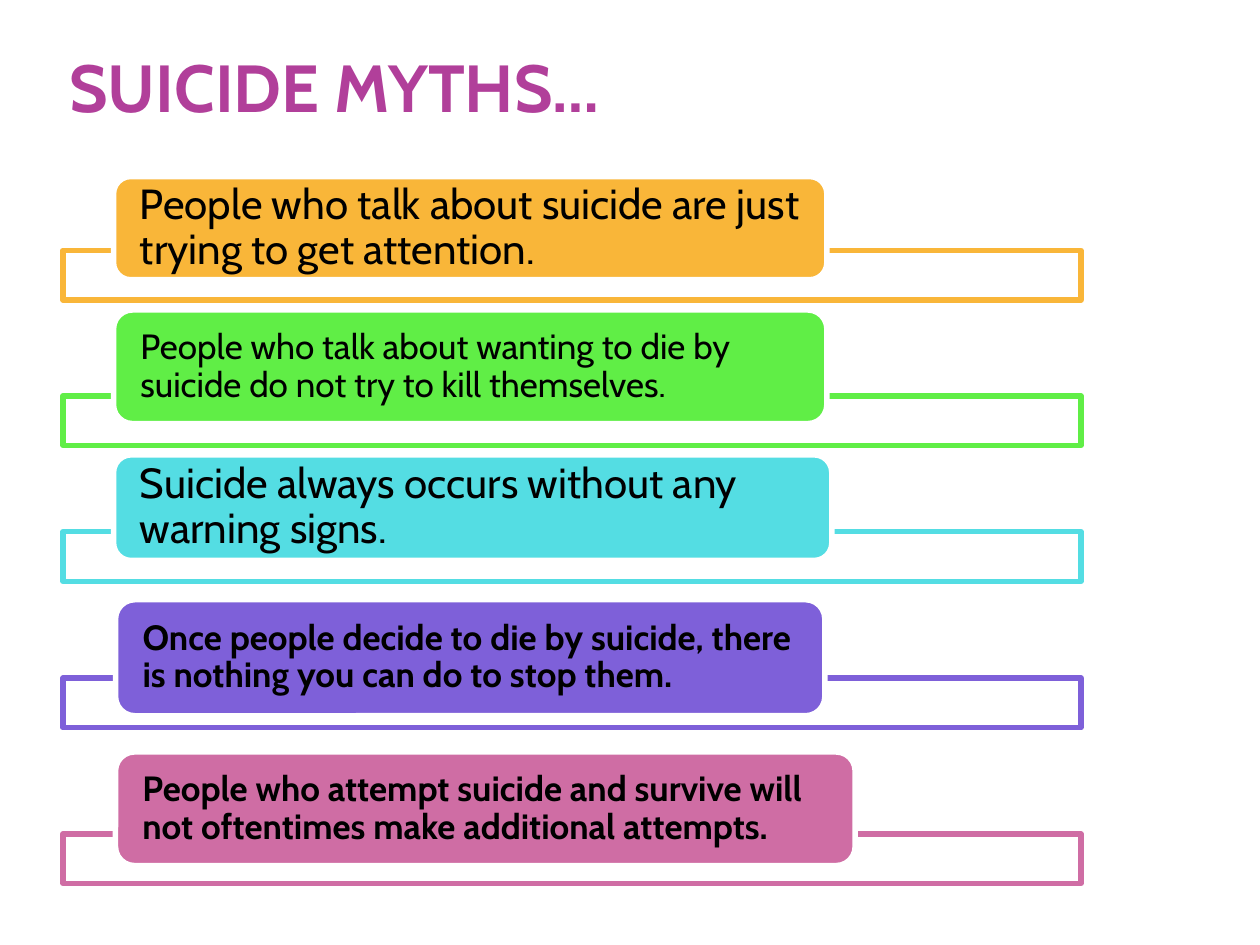
from dataclasses import dataclass

from pptx import Presentation
from pptx.dml.color import RGBColor
from pptx.enum import shapes, text
from pptx.util import Cm, Pt


@dataclass(frozen=True)
class Theme:
    font: str = "Cabin"
    title: str = "B13F9A"
    ink: str = "000000"
    paper: str = "FFFFFF"
    orange: str = "F9B639"
    green: str = "60EE46"
    cyan: str = "54DDE3"
    violet: str = "7E60D9"
    pink: str = "CF6DA4"
    title_size: float = 38
    large: float = 24
    small: float = 20
    line: float = 3.15


@dataclass(frozen=True)
class Myth:
    words: str
    color: str
    size: float
    bold: bool
    top: float
    indent: float
    width: float
    height: float
    bar_drop: float


THEME = Theme()
BAR_HEIGHT = 1.0
MYTHS = [
    Myth("People who talk about suicide are just trying to get attention.",
         THEME.orange, THEME.large, False, 3.56, 1.02, 14.38, 2.08, 1.49),
    Myth("People who talk about wanting to die by suicide do not try to kill themselves.",
         THEME.green, THEME.small, False, 6.25, 1.02, 14.38, 2.29, 1.73),
    Myth("Suicide always occurs without any warning signs.",
         THEME.cyan, THEME.large, False, 9.17, 1.02, 14.48, 2.13, 1.55),
    Myth("Once people decide to die by suicide, there is nothing you can do to stop them.",
         THEME.violet, THEME.small, True, 12.09, 1.06, 14.3, 2.34, 1.58),
    Myth("People who attempt suicide and survive will not oftentimes make additional attempts.",
         THEME.pink, THEME.small, True, 15.16, 1.06, 14.91, 2.29, 1.65),
]


def write(sp, words, size, color, bold, anchor, inset):
    tf = sp.text_frame
    tf.word_wrap = True
    tf.vertical_anchor = anchor
    tf.margin_left = tf.margin_right = Cm(inset)
    tf.margin_top = tf.margin_bottom = 0
    p = tf.paragraphs[0]
    p.text = words
    p.alignment = text.PP_ALIGN.LEFT
    p.font.name = THEME.font
    p.font.size = Pt(size)
    p.font.bold = bold
    p.font.color.rgb = RGBColor.from_string(color)
    return p


def add_box(s, kind, left, top, width, height, fill, line):
    sp = s.shapes.add_shape(kind, Cm(left), Cm(top), Cm(width), Cm(height))
    sp.shadow.inherit = False
    sp.fill.solid()
    sp.fill.fore_color.rgb = RGBColor.from_string(fill)
    sp.line.color.rgb = RGBColor.from_string(line)
    sp.line.width = Pt(THEME.line)
    return sp


def add_title(s, left, top, width, height):
    sp = s.shapes.add_textbox(Cm(left), Cm(top), Cm(width), Cm(height))
    write(sp, "SUICIDE MYTHS…", THEME.title_size, THEME.title, True,
          text.MSO_ANCHOR.BOTTOM, 0.13)


def add_myth(s, myth, left, width):
    kinds = shapes.MSO_SHAPE
    add_box(s, kinds.RECTANGLE, left, myth.top + myth.bar_drop, width,
            BAR_HEIGHT, THEME.paper, myth.color)
    label = add_box(s, kinds.ROUNDED_RECTANGLE, left + myth.indent, myth.top,
                    myth.width, myth.height, myth.color, THEME.paper)
    p = write(label, myth.words, myth.size, THEME.ink, myth.bold,
              text.MSO_ANCHOR.MIDDLE, 0.43)
    p.line_spacing = 0.9


def main():
    prs = Presentation()
    prs.slide_width, prs.slide_height = Cm(25.4), Cm(19.05)
    s = prs.slides.add_slide(prs.slide_layouts[6])
    add_title(s, 1.27, 0.89, 20.12, 1.65)
    for myth in MYTHS:
        add_myth(s, myth, 1.27, 20.52)
    prs.save("out.pptx")


if __name__ == "__main__":
    main()
